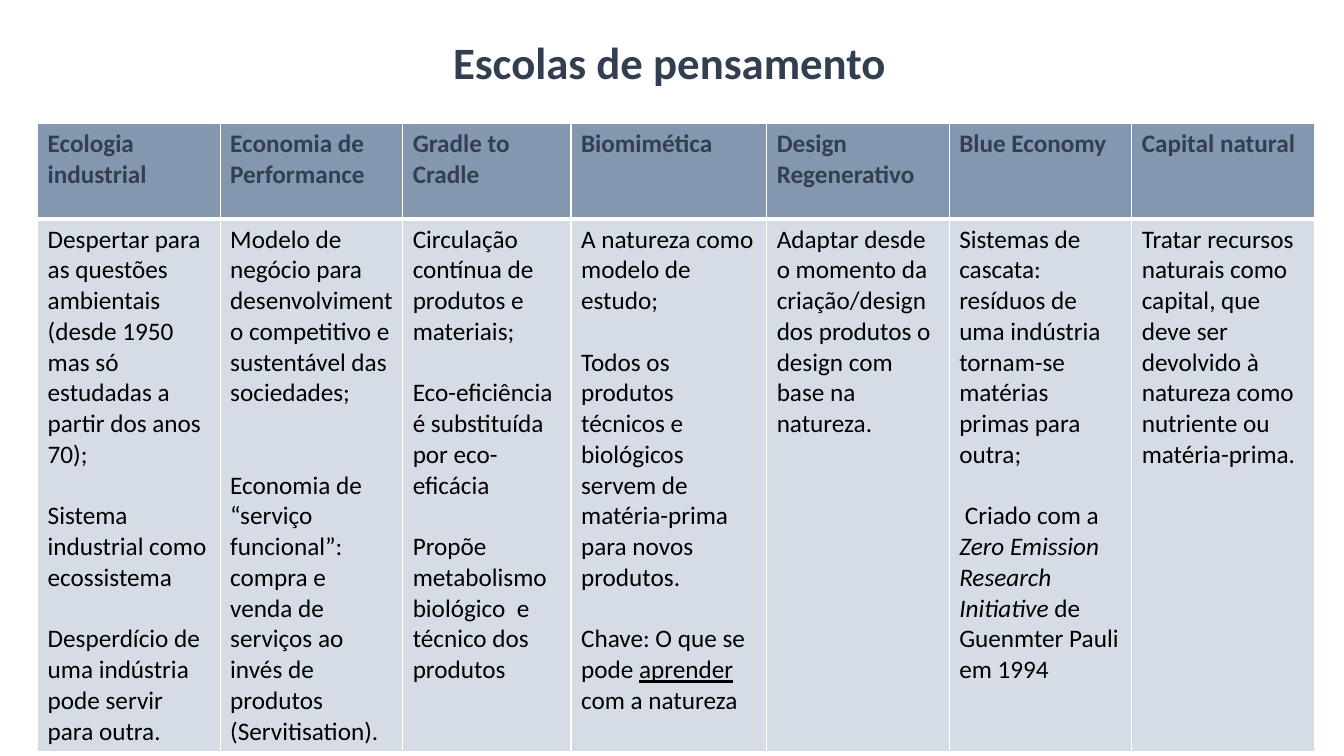
"""Build the slide that compares seven schools of thought in a table."""
from dataclasses import dataclass

from lxml.etree import SubElement
from pptx import Presentation
from pptx.dml.color import RGBColor
from pptx.enum.text import MSO_ANCHOR, MSO_AUTO_SIZE, PP_ALIGN
from pptx.oxml import parse_xml
from pptx.oxml.ns import nsdecls, qn
from pptx.slide import Slide
from pptx.table import _Cell
from pptx.text.text import Font
from pptx.util import Inches, Pt

WIDTH, HEIGHT = Inches(13.33), Inches(7.5)
FONT = "Calibri"
NAVY, STEEL, MIST, BLACK, WHITE = "333F50", "8497B0", "D6DCE5", "000000", "FFFFFF"
LINE_HEIGHT = 22
THIN, THICK = 1, 3
ROW_SHARES = (0.95 / 7.5, 4.82 / 7.5)


@dataclass(frozen=True)
class Span:
    text: str
    italic: bool = False
    underline: bool = False


@dataclass(frozen=True)
class Para:
    spans: tuple[Span, ...]
    blank_lines: int = 0


@dataclass(frozen=True)
class School:
    name: str
    weight: float
    paras: tuple[Para, ...]


def plain(text: str, blank_lines: int = 0) -> Para:
    return Para((Span(text),), blank_lines)


SCHOOLS = (
    School("Ecologia industrial", 1.81, (
        plain("Despertar para as questões ambientais (desde 1950 mas só "
              "estudadas a partir dos anos 70);"),
        plain("Sistema industrial como ecossistema", 1),
        plain("Desperdício de uma indústria pode servir para outra.", 1),
    )),
    School("Economia de Performance", 1.81, (
        plain("Modelo de negócio para desenvolvimento competitivo e "
              "sustentável das sociedades;"),
        plain("Economia de “serviço funcional”: compra e venda de serviços "
              "ao invés de produtos", 2),
        plain("(Servitisation)."),
    )),
    School("Gradle to Cradle", 1.67, (
        plain("Circulação contínua de produtos e materiais;"),
        plain("Eco-eficiência é substituída por eco-eficácia", 1),
        plain("Propõe metabolismo biológico  e técnico dos produtos", 1),
    )),
    School("Biomimética", 1.94, (
        plain("A natureza como modelo de estudo;"),
        plain("Todos os produtos técnicos e biológicos servem de "
              "matéria-prima para novos produtos.", 1),
        Para((Span("Chave: O que se pode "), Span("aprender", underline=True),
              Span(" com a natureza")), 1),
    )),
    School("Design Regenerativo", 1.81, (
        plain("Adaptar desde o momento da criação/design dos produtos o"),
        plain("design com base na natureza."),
    )),
    School("Blue Economy", 1.81, (
        plain("Sistemas de cascata: resíduos de uma indústria tornam-se "
              "matérias primas para outra;"),
        Para((Span(" Criado com a "),
              Span("Zero Emission Research Initiative ", italic=True),
              Span("de Guenmter Pauli em 1994")), 1),
    )),
    School("Capital natural", 1.81, (
        plain("Tratar recursos naturais como capital, que deve ser devolvido "
              "à natureza como nutriente ou matéria-prima."),
    )),
)


def color(value: str) -> RGBColor:
    return RGBColor.from_string(value)


def across(share: float) -> int:
    return round(WIDTH * share)


def down(share: float) -> int:
    return round(HEIGHT * share)


def set_font(font: Font, size: int, ink: str, bold: bool) -> None:
    font.name, font.size, font.bold = FONT, Pt(size), bold
    font.color.rgb = color(ink)


def set_borders(cell: _Cell, top: int, bottom: int) -> None:
    properties = cell._tc.get_or_add_tcPr()
    sides = (("lnL", THIN), ("lnR", THIN), ("lnT", top), ("lnB", bottom))
    for index, (side, points) in enumerate(sides):
        line = parse_xml(f'<a:{side} {nsdecls("a")} w="{Pt(points)}"/>')
        fill = SubElement(line, qn("a:solidFill"))
        SubElement(fill, qn("a:srgbClr")).set("val", WHITE)
        properties.insert(index, line)


def fill_cell(cell: _Cell, paras: tuple[Para, ...], fill: str, ink: str, bold: bool) -> None:
    cell.fill.solid()
    cell.fill.fore_color.rgb = color(fill)
    frame = cell.text_frame
    for index, para in enumerate(paras):
        paragraph = frame.add_paragraph() if index else frame.paragraphs[0]
        set_font(paragraph.font, 18, ink, bold)
        if para.blank_lines:
            paragraph.space_before = Pt(LINE_HEIGHT * para.blank_lines)
        for span in para.spans:
            run = paragraph.add_run()
            run.text = span.text
            set_font(run.font, 18, ink, bold)
            if span.italic:
                run.font.italic = True
            if span.underline:
                run.font.underline = True


def draw_title(page: Slide) -> None:
    title = page.shapes.title
    title.left, title.top = across(0.137), down(0.021)
    title.width, title.height = across(0.73), down(0.131)
    frame = title.text_frame
    frame.word_wrap = True
    frame.auto_size = MSO_AUTO_SIZE.NONE
    frame.vertical_anchor = MSO_ANCHOR.MIDDLE
    frame.text = "Escolas de pensamento "
    paragraph = frame.paragraphs[0]
    paragraph.alignment = PP_ALIGN.CENTER
    paragraph.line_spacing = 0.9
    set_font(paragraph.font, 32, NAVY, True)


def draw_table(page: Slide) -> None:
    table_width = across(0.95)
    table = page.shapes.add_table(
        len(ROW_SHARES), len(SCHOOLS), across(0.028), down(0.163), table_width, down(0.86)
    ).table
    for row, share in zip(table.rows, ROW_SHARES):
        row.height = down(share)
    total = sum(school.weight for school in SCHOOLS)
    for index, school in enumerate(SCHOOLS):
        table.columns[index].width = round(table_width * school.weight / total)
        header, body = table.cell(0, index), table.cell(1, index)
        fill_cell(header, (plain(school.name),), STEEL, NAVY, True)
        fill_cell(body, school.paras, MIST, BLACK, False)
        set_borders(header, THIN, THICK)
        set_borders(body, THICK, THIN)


def main() -> None:
    deck = Presentation()
    deck.slide_width, deck.slide_height = WIDTH, HEIGHT
    page = deck.slides.add_slide(deck.slide_layouts.get_by_name("Title Only"))
    draw_title(page)
    draw_table(page)
    deck.save("out.pptx")


if __name__ == "__main__":
    main()
